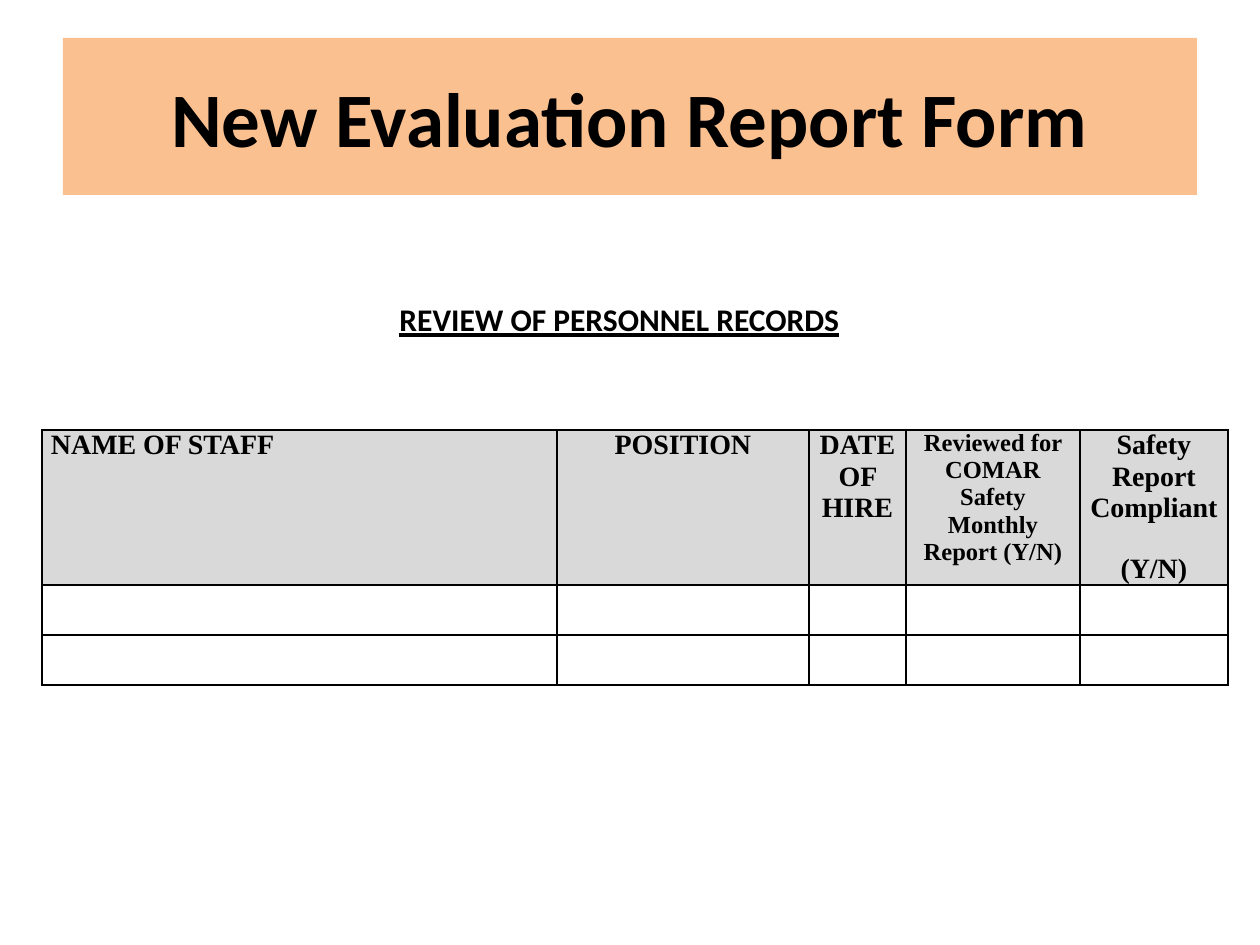
"""Builds the evaluation report form slide."""
from dataclasses import dataclass

from lxml import etree
from pptx import Presentation
from pptx.dml.color import RGBColor
from pptx.enum.shapes import MSO_SHAPE
from pptx.enum.text import MSO_ANCHOR, PP_ALIGN
from pptx.oxml.ns import qn
from pptx.util import Emu, Pt

RECT = MSO_SHAPE.RECTANGLE
MIDDLE = MSO_ANCHOR.MIDDLE
LEFT, CENTER = PP_ALIGN.LEFT, PP_ALIGN.CENTER
SCALE = 914400 / 126
BLACK, PEACH, GREY, WHITE = "000000", "FAC090", "D9D9D9", "FFFFFF"
SERIF, SANS = "Times New Roman", "Calibri"


@dataclass
class Column:
    width: int
    lines: tuple[str, ...]
    size: int = 16
    align: PP_ALIGN = CENTER
    gap: int = 0


COLUMNS = [
    Column(515, ("NAME OF STAFF",), align=LEFT),
    Column(252, ("POSITION",)),
    Column(97, ("DATE OF HIRE",)),
    Column(174, ("Reviewed for COMAR Safety Monthly Report (Y/N)",), size=14),
    Column(148, ("Safety Report", "Compliant", "(Y/N)"), gap=17),
]
ROWS = [155, 50, 50]


def px(count: int) -> Emu:
    return Emu(round(count * SCALE))


def color(code: str) -> RGBColor:
    return RGBColor.from_string(code)


def write(frame, *lines: str, size: int, font: str, align=CENTER,
          under: bool = False, gap: int = 0) -> None:
    frame.word_wrap = True
    for index, line in enumerate(lines):
        para = frame.add_paragraph() if index else frame.paragraphs[0]
        para.alignment = align
        if gap and index == len(lines) - 1:
            para.space_before = Pt(gap)
        run = para.add_run()
        run.text = line
        face = run.font
        face.name, face.size, face.bold = font, Pt(size), True
        face.color.rgb = color(BLACK)
        if under:
            face.underline = True


def paint(cell, fill: str) -> None:
    cell.margin_left = cell.margin_right = px(9)
    cell.margin_top = cell.margin_bottom = 0
    props = cell._tc.get_or_add_tcPr()
    for side in ("a:lnL", "a:lnR", "a:lnT", "a:lnB"):
        line = etree.SubElement(props, qn(side), w=str(Pt(1)))
        solid = etree.SubElement(line, qn("a:solidFill"))
        etree.SubElement(solid, qn("a:srgbClr"), val=BLACK)
    cell.fill.solid()
    cell.fill.fore_color.rgb = color(fill)


def draw_title(slide) -> None:
    box = slide.shapes.add_shape(RECT, px(63), px(38), px(1134), px(157))
    box.shadow.inherit = False
    box.fill.solid()
    box.fill.fore_color.rgb = color(PEACH)
    box.line.fill.background()
    box.text_frame.vertical_anchor = MIDDLE
    write(box.text_frame, "New Evaluation Report Form", size=44, font=SANS)


def draw_table(slide) -> None:
    width = sum(col.width for col in COLUMNS)
    table = slide.shapes.add_table(
        len(ROWS), len(COLUMNS), px(42), px(430), px(width), px(sum(ROWS))).table
    for row, height in zip(table.rows, ROWS):
        row.height = px(height)
    for index, col in enumerate(COLUMNS):
        table.columns[index].width = px(col.width)
        for level in range(len(ROWS)):
            paint(table.cell(level, index), WHITE if level else GREY)
        write(table.cell(0, index).text_frame, *col.lines, size=col.size,
              font=SERIF, align=col.align, gap=col.gap)


def main() -> None:
    deck = Presentation()
    deck.slide_width, deck.slide_height = px(1260), px(945)
    slide = deck.slides.add_slide(deck.slide_layouts[6])
    draw_title(slide)
    draw_table(slide)
    label = slide.shapes.add_textbox(px(210), px(294), px(819), px(50))
    write(label.text_frame, "REVIEW OF PERSONNEL RECORDS", size=18,
          font=SANS, under=True)
    deck.save("out.pptx")


if __name__ == "__main__":
    main()
